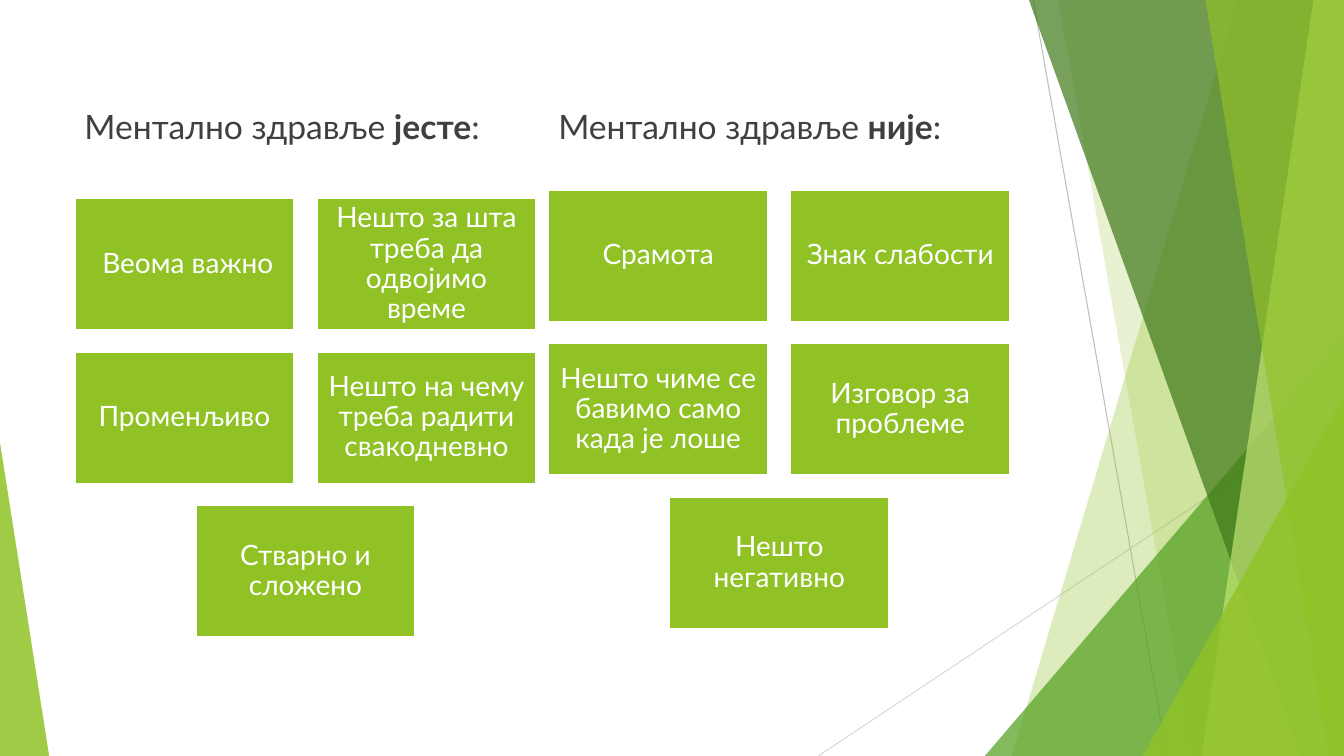
from pptx import Presentation
from pptx.dml.color import RGBColor
from pptx.enum.shapes import MSO_CONNECTOR, MSO_SHAPE
from pptx.enum.text import MSO_ANCHOR, PP_ALIGN
from pptx.oxml.ns import qn
from pptx.util import Cm, Pt
from lxml import etree

RECT = MSO_SHAPE.RECTANGLE
TRIANGLE = MSO_SHAPE.ISOSCELES_TRIANGLE
STRAIGHT = MSO_CONNECTOR.STRAIGHT
MIDDLE = MSO_ANCHOR.MIDDLE
BOTTOM = MSO_ANCHOR.BOTTOM
CENTER = PP_ALIGN.CENTER

FONT = "Lato"
WIDTH, HEIGHT = 33.87, 19.05
BOX_W, BOX_H = 5.54, 3.33
STEP_X, STEP_Y = 6.1, 3.87
SPOTS = [(0, 0), (1, 0), (0, 1), (1, 1), (0.5, 2)]

COLORS = {
    "lime": "90C226",
    "green": "54A021",
    "forest": "3F7819",
    "pale": "C0E474",
    "gray": "BFBFBF",
    "silver": "D9D9D9",
    "text": "404040",
    "white": "FFFFFF",
}


def rgb(name):
    return RGBColor.from_string(COLORS[name])


def tint(shape, color, alpha):
    shape.shadow.inherit = False
    shape.fill.solid()
    shape.fill.fore_color.rgb = rgb(color)
    shape.line.fill.background()
    tone = shape._element.spPr.find(".//" + qn("a:srgbClr"))
    etree.SubElement(tone, qn("a:alpha")).set("val", str(alpha * 1000))


def add_line(slide, start, end, color):
    line = slide.shapes.add_connector(STRAIGHT, *map(Cm, start + end))
    line.line.color.rgb = rgb(color)
    line.line.width = Pt(0.75)
    etree.SubElement(line._element.spPr, qn("a:effectLst"))


def add_shard(slide, top, base, color, alpha):
    form = slide.shapes.build_freeform(Cm(top), Cm(0))
    edge = [(WIDTH, 0), (WIDTH, HEIGHT), (base, HEIGHT)]
    form.add_line_segments([(Cm(x), Cm(y)) for x, y in edge], close=True)
    tint(form.convert_to_shape(), color, alpha)


def add_wedge(slide, left, top, width, apex, color, alpha):
    wedge = slide.shapes.add_shape(
        TRIANGLE, Cm(left), Cm(top), Cm(width), Cm(HEIGHT - top))
    wedge.adjustments[0] = apex
    tint(wedge, color, alpha)


def add_run(para, text, size, color, bold=False):
    run = para.add_run()
    run.text = text
    run.font.name = FONT
    run.font.size = Pt(size)
    run.font.bold = bold
    run.font.color.rgb = rgb(color)


def add_head(slide, left, top, word):
    box = slide.shapes.add_textbox(
        Cm(left), Cm(top), Cm(11.63), Cm(3.81 - top))
    frame = box.text_frame
    frame.word_wrap = True
    frame.vertical_anchor = BOTTOM
    para = frame.paragraphs[0]
    para.space_before = Pt(10)
    add_run(para, "Ментално здравље ", 24, "text")
    add_run(para, word, 24, "text", True)
    add_run(para, ":", 24, "text")


def add_box(slide, left, top, runs):
    box = slide.shapes.add_shape(
        RECT, Cm(left), Cm(top), Cm(BOX_W), Cm(BOX_H))
    box.shadow.inherit = False
    box.fill.solid()
    box.fill.fore_color.rgb = rgb("lime")
    box.line.color.rgb = rgb("white")
    box.line.width = Pt(1.5)
    frame = box.text_frame
    frame.word_wrap = True
    frame.vertical_anchor = MIDDLE
    frame.margin_left = frame.margin_right = Cm(0.2)
    frame.margin_top = frame.margin_bottom = Cm(0.2)
    para = frame.paragraphs[0]
    para.alignment = CENTER
    para.line_spacing = 0.9
    for text, size in runs:
        add_run(para, text, size, "white")


def add_grid(slide, left, top, items):
    for (col, row), runs in zip(SPOTS, items):
        add_box(slide, left + col * STEP_X, top + row * STEP_Y, runs)


def add_decor(slide):
    add_line(slide, (26.04, 0), (29.41, HEIGHT), "gray")
    add_line(slide, (WIDTH, 10.24), (20.62, HEIGHT), "silver")
    add_shard(slide, 31.19, 25.5, "lime", 30)
    add_shard(slide, 26.67, 30.05, "lime", 20)
    add_wedge(slide, 24.82, 8.46, 9.05, 1, "green", 72)
    add_shard(slide, 25.93, 32.79, "forest", 70)
    add_shard(slide, 33.1, 30.28, "pale", 70)
    add_shard(slide, 30.38, 33.48, "lime", 65)
    add_wedge(slide, 28.8, 9.98, 5.07, 1, "lime", 80)
    add_wedge(slide, 0, 11.15, 1.24, 0, "lime", 85)


def main():
    deck = Presentation()
    deck.slide_width = Cm(WIDTH)
    deck.slide_height = Cm(HEIGHT)
    slide = deck.slides.add_slide(deck.slide_layouts[6])
    add_decor(slide)
    add_head(slide, 1.88, 1.7, "јесте")
    add_head(slide, 13.82, 2.16, "није")
    add_grid(slide, 13.82, 4.78, [
        [("Срамота", 20)],
        [("Знак слабости", 20)],
        [("Нешто чиме се бавимо само када је лоше", 20)],
        [("Изговор за проблеме", 20)],
        [("Нешто негативно", 20)],
    ])
    add_grid(slide, 1.88, 4.99, [
        [(" ", 19), ("Веома важно", 20)],
        [("Нешто за шта треба да одвојимо време", 20)],
        [("Променљиво", 20)],
        [("Нешто на чему треба радити свакодневно", 20)],
        [("Стварно и сложено", 20)],
    ])
    deck.save("out.pptx")


if __name__ == "__main__":
    main()
